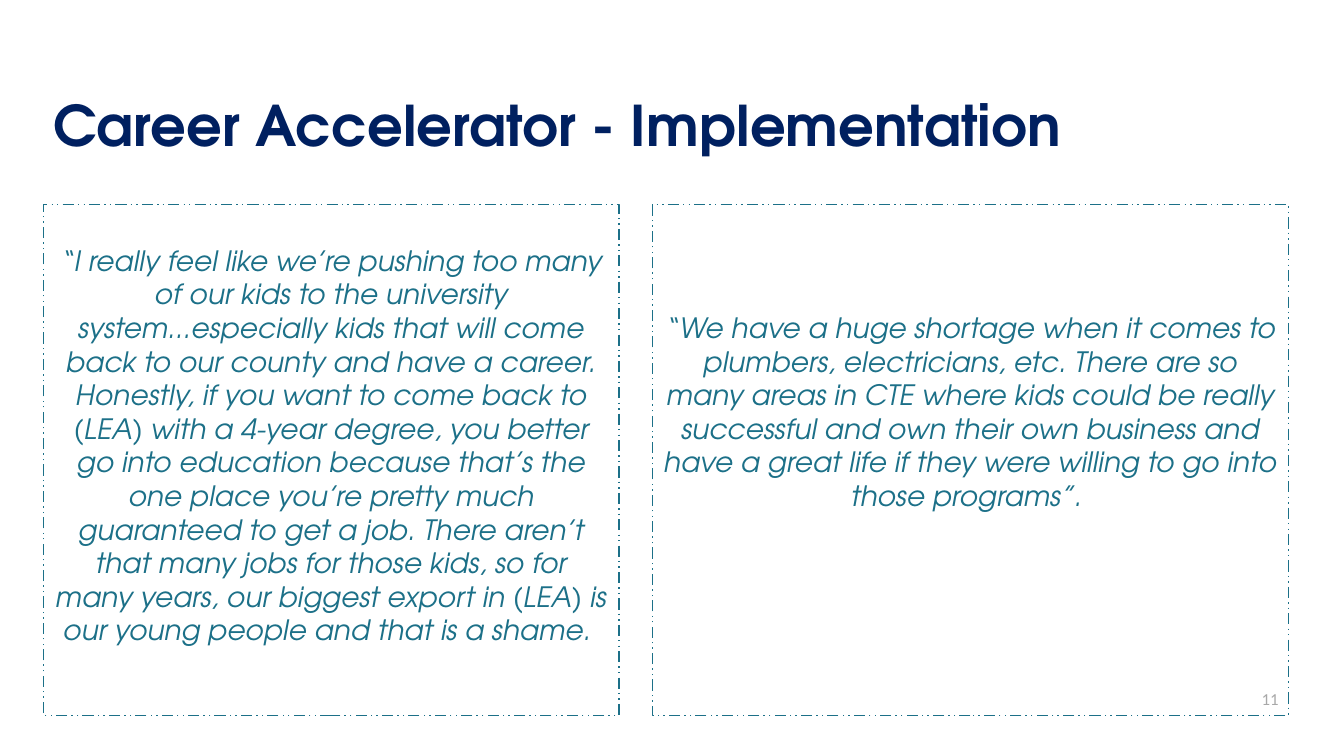
from pptx import Presentation
from pptx.dml.color import RGBColor
from pptx.enum.dml import MSO_LINE
from pptx.enum.shapes import MSO_SHAPE
from pptx.enum.text import MSO_ANCHOR, PP_ALIGN
from pptx.util import Inches, Pt

RECTANGLE = MSO_SHAPE.RECTANGLE
DASH = MSO_LINE.DASH_DOT_DOT
TOP, MIDDLE = MSO_ANCHOR.TOP, MSO_ANCHOR.MIDDLE
LEFT, CENTER, RIGHT = PP_ALIGN.LEFT, PP_ALIGN.CENTER, PP_ALIGN.RIGHT
NAVY = RGBColor(0x00, 0x20, 0x60)
TEAL = RGBColor(0x1C, 0x70, 0x88)
GREY = RGBColor(0xA8, 0xA8, 0xA8)
HEADING_FONT, NUMBER_FONT = "TeX Gyre Adventor", "Calibri"

# Content
TITLE = "Career Accelerator - Implementation"
PAGE_NUMBER = "11"
# Quote, panel width in inches, text lines left free above it
QUOTES = [
    ("“I really feel like we’re pushing too many of our kids to the university "
     "system...especially kids that will come back to our county and have a career. "
     "Honestly, if you want to come back to (LEA) with a 4-year degree, you better "
     "go into education because that’s the one place you’re pretty much guaranteed "
     "to get a job. There aren’t that many jobs for those kids, so for many years, "
     "our biggest export in (LEA) is our young people and that is a shame. ", 5.71, 1),
    ("“We have a huge shortage when it comes to plumbers, electricians, etc. There "
     "are so many areas in CTE where kids could be really successful and own their "
     "own business and have a great life if they were willing to go into those "
     "programs”. ", 6.31, 3),
]

# Layout in inches
SLIDE_W, SLIDE_H = 13.33, 7.5
MARGIN, GUTTER = 0.43, 0.33
PANEL_TOP, PANEL_H = 2.03, 5.07
INSET = 0.05
QUOTE_SIZE = 20
QUOTE_LINE = QUOTE_SIZE * 1.2 / 72


def write(holder, text, size, color, align=LEFT, anchor=TOP, font=HEADING_FONT,
          bold=False, italic=False, space_above=0):
    frame = holder.text_frame
    frame.word_wrap = True
    frame.vertical_anchor = anchor
    frame.margin_top = Inches(INSET + space_above)
    frame.margin_bottom = Inches(INSET)
    frame.text = text
    paragraph = frame.paragraphs[0]
    paragraph.alignment = align
    style = paragraph.runs[0].font
    style.name, style.size = font, Pt(size)
    style.bold, style.italic = bold, italic
    style.color.rgb = color


prs = Presentation()
prs.slide_width, prs.slide_height = Inches(SLIDE_W), Inches(SLIDE_H)
slide = prs.slides.add_slide(prs.slide_layouts[6])

# Page number
page_number = slide.shapes.add_textbox(Inches(9.82), Inches(6.8), Inches(2.96), Inches(0.27))
write(page_number, PAGE_NUMBER, 12, GREY, RIGHT, MIDDLE, NUMBER_FONT)

# Title
title = slide.shapes.add_textbox(Inches(MARGIN), Inches(0.85), Inches(12.24), Inches(0.79))
write(title, TITLE, 40, NAVY, bold=True)

# Quote panels, side by side
panel_left = MARGIN
for quote, panel_w, free_lines in QUOTES:
    panel = slide.shapes.add_shape(RECTANGLE, Inches(panel_left), Inches(PANEL_TOP),
                                   Inches(panel_w), Inches(PANEL_H))
    panel.shadow.inherit = False
    panel.fill.background()
    panel.line.color.rgb = TEAL
    panel.line.width = Pt(1)
    panel.line.dash_style = DASH
    write(panel, quote, QUOTE_SIZE, TEAL, CENTER, italic=True,
          space_above=free_lines * QUOTE_LINE)
    panel_left += panel_w + GUTTER

prs.save("out.pptx")
